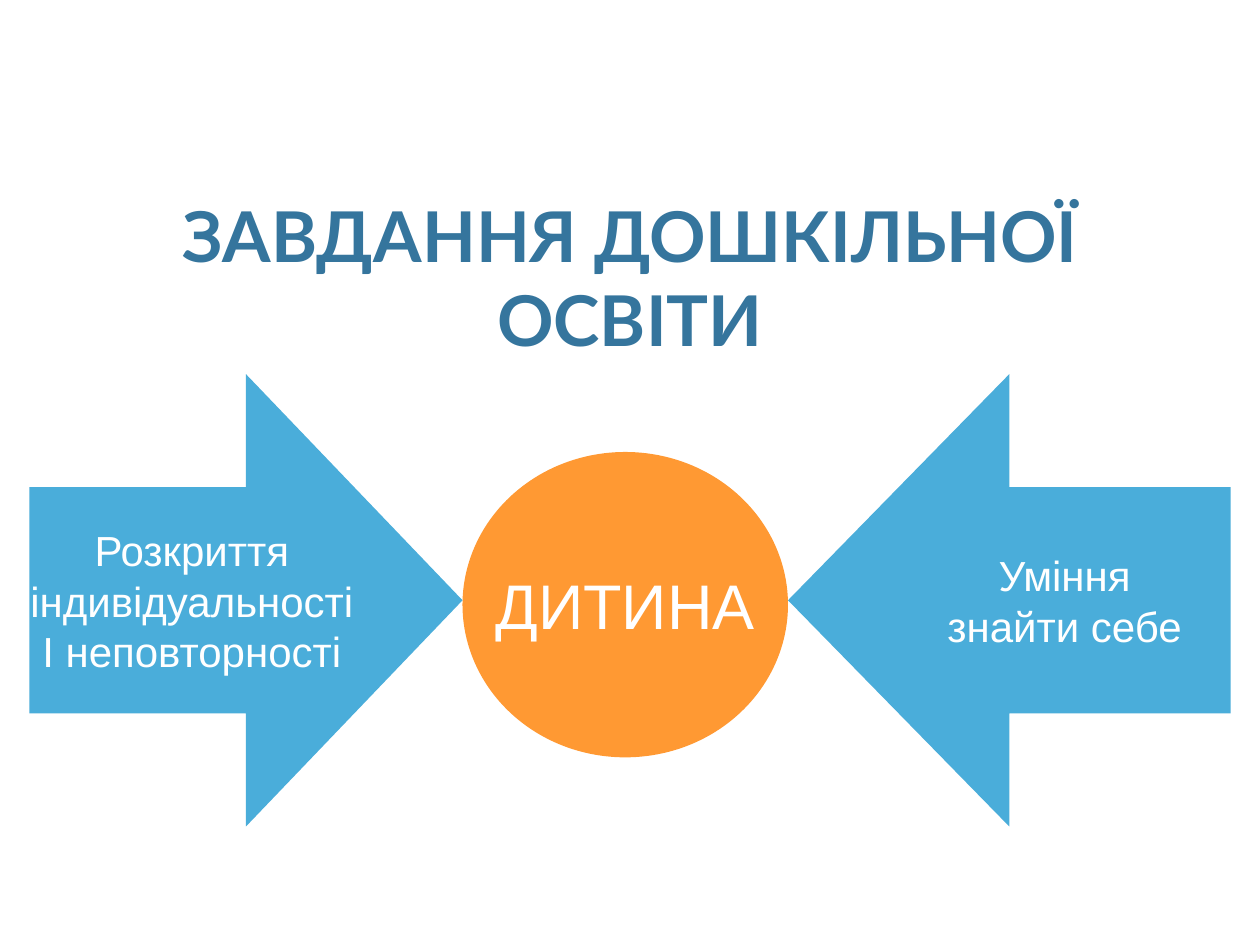
from pptx import Presentation
from pptx.dml.color import RGBColor
from pptx.enum.shapes import MSO_SHAPE
from pptx.enum.text import MSO_ANCHOR, MSO_AUTO_SIZE, PP_ALIGN
from pptx.util import Pt

BLUE, ORANGE, WHITE, HEADING = "4AADDA", "FF9933", "FFFFFF", "35759D"


def color(value):
    return RGBColor.from_string(value)


def write_lines(frame, lines, size, font, ink, bold=False):
    """Write centred paragraphs, one run for each line."""
    frame.vertical_anchor = MSO_ANCHOR.MIDDLE
    frame.auto_size = MSO_AUTO_SIZE.NONE
    for index, line in enumerate(lines):
        paragraph = frame.add_paragraph() if index else frame.paragraphs[0]
        paragraph.alignment = PP_ALIGN.CENTER
        run = paragraph.add_run()
        run.text = line
        run.font.size = Pt(size)
        run.font.name = font
        run.font.bold = bold
        run.font.color.rgb = color(ink)


def add_heading(slide, left, top, width, height):
    heading = slide.shapes.title
    heading.left, heading.top = Pt(left), Pt(top)
    heading.width, heading.height = Pt(width), Pt(height)
    heading.text_frame.word_wrap = True
    write_lines(heading.text_frame, ["ЗАВДАННЯ ДОШКІЛЬНОЇ ОСВІТИ"],
                40, "Lato", HEADING, bold=True)


def add_figure(slide, kind, box, fill, lines, size):
    figure = slide.shapes.add_shape(kind, *map(Pt, box))
    figure.shadow.inherit = False
    figure.fill.solid()
    figure.fill.fore_color.rgb = color(fill)
    figure.line.fill.background()
    figure.text_frame.word_wrap = False
    write_lines(figure.text_frame, lines, size, "Arial", WHITE)


def add_child_diagram(slide, left, top, width, height):
    """Two arrows pointing at the child in the middle."""
    child_left, child_width, child_height = left + 247.5, 186, 174.5
    child_right = child_left + child_width
    # Child
    add_figure(slide, MSO_SHAPE.OVAL,
               (child_left, top + 44.5, child_width, child_height),
               ORANGE, ["ДИТИНА"], 36)
    # Left arrow
    add_figure(slide, MSO_SHAPE.RIGHT_ARROW,
               (left, top, child_left - left, height), BLUE,
               ["Розкриття", "індивідуальності", "І неповторності"], 24)
    # Right arrow
    add_figure(slide, MSO_SHAPE.LEFT_ARROW,
               (child_right, top, left + width - child_right, height), BLUE,
               ["Уміння", "знайти себе"], 24)


def main():
    deck = Presentation()
    deck.slide_width, deck.slide_height = Pt(720), Pt(540)
    slide = deck.slides.add_slide(deck.slide_layouts[5])
    add_heading(slide, 22.5, 122.5, 675, 70.5)
    add_child_diagram(slide, 16.8, 213.8, 686.4, 258.5)
    deck.save("out.pptx")


if __name__ == "__main__":
    main()
